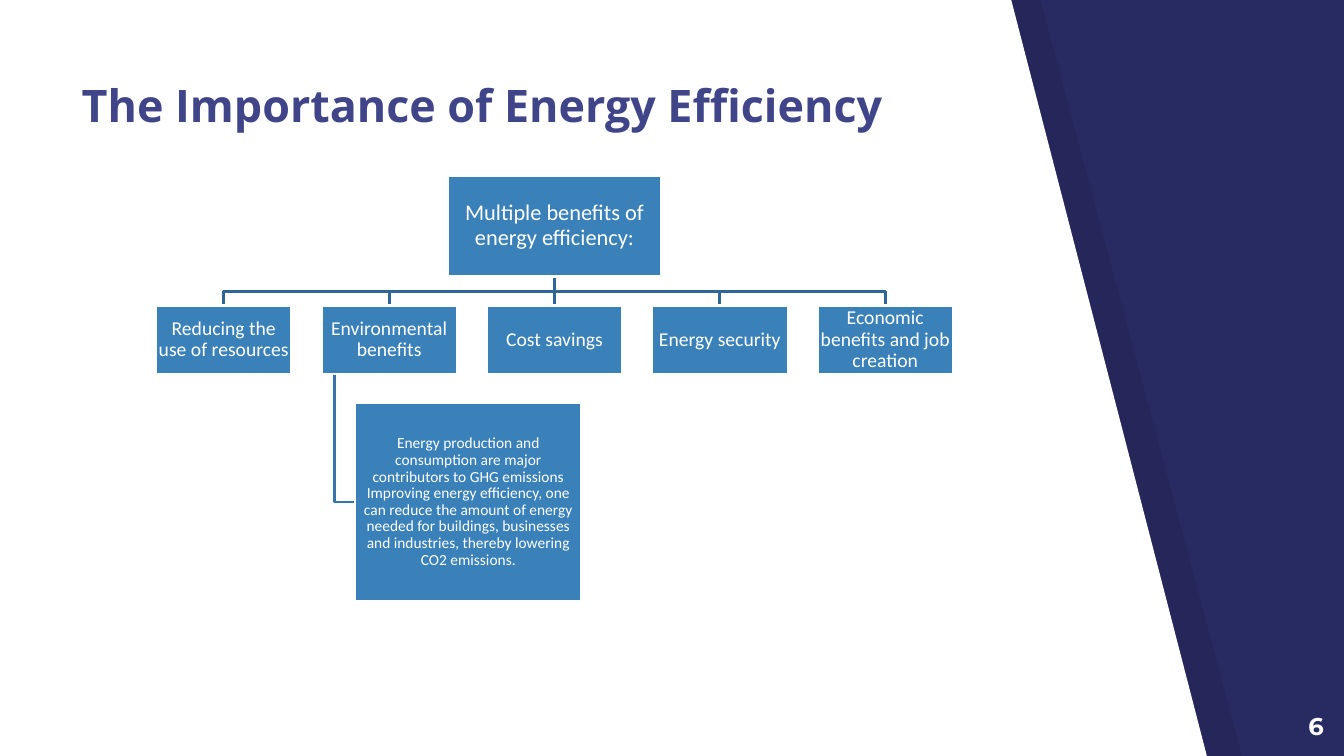
import pptx
import pptx.util
import pptx.dml.color
import pptx.enum.shapes
import pptx.enum.text
import pptx.oxml.ns
from lxml import etree

RGB = pptx.dml.color.RGBColor
NAVY = RGB(0x28, 0x2B, 0x62)
BLACK = RGB(0, 0, 0)
WHITE = RGB(0xFF, 0xFF, 0xFF)
INDIGO = RGB(0x40, 0x45, 0x89)
BLUE = RGB(0x3A, 0x81, 0xBA)
TRUNK = RGB(0x2E, 0x67, 0x95)
BRANCH = RGB(0x35, 0x75, 0xA9)

WIDE, HIGH = 13.33, 7.5
LEFT, PITCH = 2.22, 1.64
ROOT_TOP, ROOT_END = 1.74, 2.74
BEND = 2.89
ROW_TOP, ROW_END = 3.03, 3.71
STEM = 3.32
NOTE_LEFT, NOTE_TOP, NOTE_W, NOTE_H = 3.52, 3.99, 2.25, 1.98

ROOT = "Multiple benefits of energy efficiency:"
GAINS = [
    "Reducing the use of resources",
    "Environmental benefits",
    "Cost savings",
    "Energy security",
    "Economic benefits and job creation",
]
NOTE = (
    "Energy production and consumption are major contributors to GHG emissions "
    "Improving energy efficiency, one can reduce the amount of energy needed for "
    "buildings, businesses and industries, thereby lowering CO2 emissions."
)

inch = pptx.util.Inches
ALIGN = pptx.enum.text.PP_ALIGN
ANCHOR = pptx.enum.text.MSO_ANCHOR


def col(i):
    """Return the centre of column i."""
    return LEFT + PITCH * i


def outline(slide, points, close):
    """Draw a freeform through points given in inches."""
    spots = [(inch(x), inch(y)) for x, y in points]
    pen = slide.shapes.build_freeform(*spots[0])
    pen.add_line_segments(spots[1:], close=close)
    shape = pen.convert_to_shape()
    shape.shadow.inherit = False
    return shape


def panel(slide, top, base, color, alpha=None):
    """Fill the area left of a slanted edge."""
    shape = outline(slide, [(0, 0), (0, HIGH), (base, HIGH), (top, 0)], True)
    shape.fill.solid()
    shape.fill.fore_color.rgb = color
    shape.line.fill.background()
    if alpha:
        tone = shape.fill._xPr.find(".//" + pptx.oxml.ns.qn("a:srgbClr"))
        etree.SubElement(tone, pptx.oxml.ns.qn("a:alpha"), val=str(alpha * 1000))


def ink(line, color):
    """Set the colour and width of a line."""
    line.color.rgb = color
    line.width = pptx.util.Pt(2)


def bend(slide, points, color):
    """Draw an open bent line."""
    shape = outline(slide, points, False)
    shape.fill.background()
    ink(shape.line, color)


def link(slide, x, top, end):
    """Draw an upright straight connector."""
    kind = pptx.enum.shapes.MSO_CONNECTOR.STRAIGHT
    line = slide.shapes.add_connector(kind, inch(x), inch(top), inch(x), inch(end))
    ink(line.line, TRUNK)
    etree.SubElement(line._element.spPr, pptx.oxml.ns.qn("a:effectLst"))
    return line


def write(shape, text, size, face, color, align, anchor, inset, bold=False):
    """Put one styled paragraph in a shape."""
    frame = shape.text_frame
    frame.word_wrap = True
    frame.vertical_anchor = anchor
    frame.margin_left = frame.margin_right = inch(inset)
    frame.margin_top = frame.margin_bottom = inch(inset)
    para = frame.paragraphs[0]
    para.text = text
    para.alignment = align
    para.font.size = pptx.util.Pt(size)
    para.font.name = face
    para.font.bold = bold
    para.font.color.rgb = color
    return para


def box(slide, text, left, top, wide, high, size):
    """Draw a blue box with centred text."""
    kind = pptx.enum.shapes.MSO_SHAPE.RECTANGLE
    shape = slide.shapes.add_shape(kind, inch(left), inch(top), inch(wide), inch(high))
    shape.shadow.inherit = False
    shape.fill.solid()
    shape.fill.fore_color.rgb = BLUE
    ink(shape.line, WHITE)
    para = write(shape, text, size, "Calibri", WHITE, ALIGN.CENTER, ANCHOR.MIDDLE, 0.01)
    para.line_spacing = 0.9
    return shape


def label(slide, text, place, size, face, color, align, anchor):
    """Add a bold text box."""
    shape = slide.shapes.add_textbox(*map(inch, place))
    write(shape, text, size, face, color, align, anchor, 0.13, True)


def chart(slide):
    """Draw the tree of benefits, lines below boxes."""
    mid = len(GAINS) // 2
    hub = col(mid)
    for i in range(len(GAINS)):
        if i != mid:
            bend(slide, [(hub, ROOT_END), (hub, BEND), (col(i), BEND), (col(i), ROW_TOP)], TRUNK)
    trunk = link(slide, hub, ROOT_END, ROW_TOP)
    half = NOTE_TOP + NOTE_H / 2
    bend(slide, [(STEM, ROW_END), (STEM, half), (NOTE_LEFT, half)], BRANCH)

    wide = 2.13
    root = box(slide, ROOT, hub - wide / 2, ROOT_TOP, wide, ROOT_END - ROOT_TOP, 16)
    wide = 1.35
    row = [
        box(slide, gain, col(i) - wide / 2, ROW_TOP, wide, ROW_END - ROW_TOP, 14)
        for i, gain in enumerate(GAINS)
    ]
    box(slide, NOTE, NOTE_LEFT, NOTE_TOP, NOTE_W, NOTE_H, 11)
    trunk.begin_connect(root, 2)
    trunk.end_connect(row[mid], 0)


def main():
    """Build and save the slide."""
    deck = pptx.Presentation()
    deck.slide_width, deck.slide_height = inch(WIDE), inch(HIGH)
    slide = deck.slides.add_slide(deck.slide_layouts[6])
    slide.background.fill.solid()
    slide.background.fill.fore_color.rgb = NAVY
    panel(slide, 10.32, 12.32, BLACK, 7)
    panel(slide, 10.03, 11.97, WHITE)
    label(slide, "The Importance of Energy Efficiency", (0.68, 0.12, 9.26, 1.31),
          32, "Open Sans", INDIGO, ALIGN.LEFT, ANCHOR.BOTTOM)
    label(slide, "6", (12.46, 6.93, 0.8, 0.57),
          17.3, "Montserrat", WHITE, ALIGN.RIGHT, ANCHOR.TOP)
    chart(slide)
    deck.save("out.pptx")


if __name__ == "__main__":
    main()
